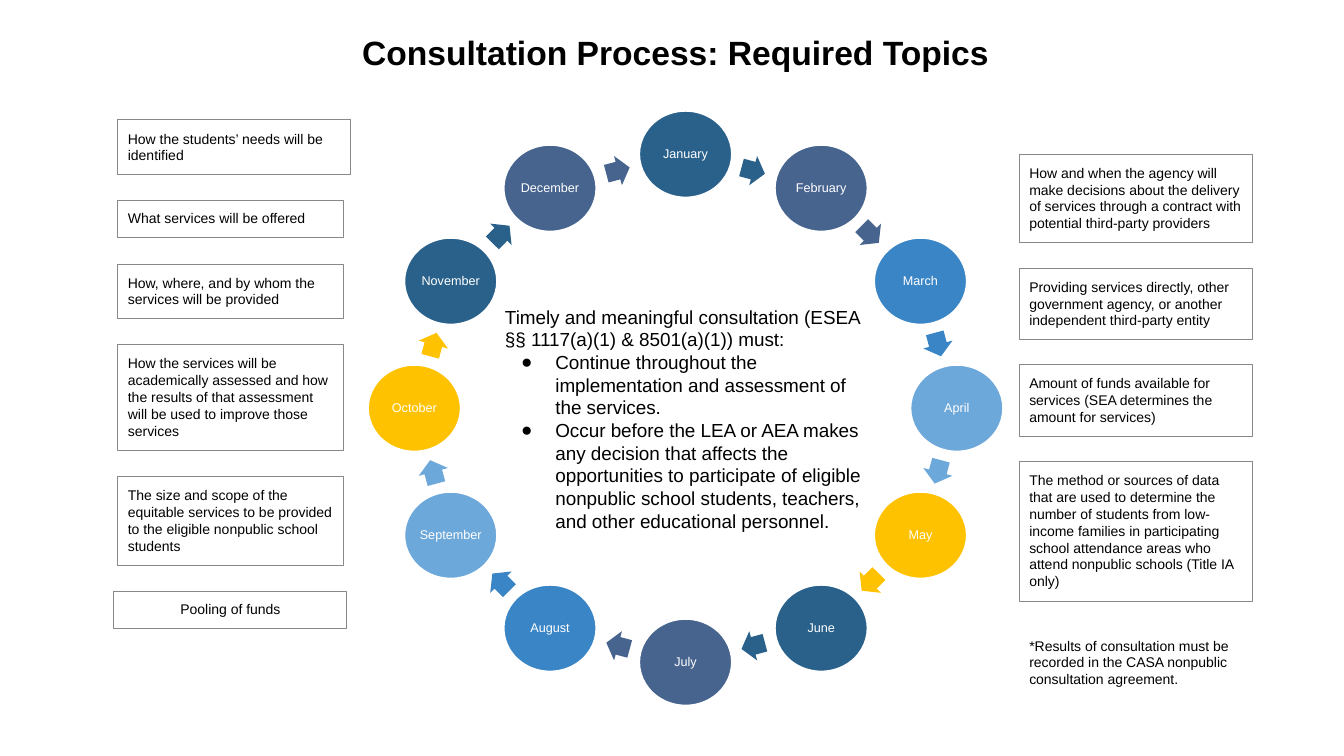
"""Build the slide on required consultation topics around the yearly cycle."""
from dataclasses import dataclass
from itertools import cycle
from math import cos, radians, sin

from lxml import etree
from pptx import Presentation
from pptx import util as u
from pptx.dml.color import RGBColor
from pptx.enum import shapes, text
from pptx.oxml import ns

BLACK, WHITE, GREY = "000000", "FFFFFF", "888888"
MONTHS = ("January", "February", "March", "April", "May", "June", "July",
          "August", "September", "October", "November", "December")
MONTH_COLORS = ("29618B", "47648F", "3A85C6", "6DA8DB", "FFC200")
CENTER_X, CENTER_Y = 6.8, 4.05
TOPIC_PADDING, TOPIC_LINE = 0.2, 0.17


@dataclass
class Topic:
    words: str
    lines: int
    left: float
    width: float = 2.31
    outlined: bool = True
    centered: bool = False


@dataclass
class Column:
    top: float
    gap: float
    topics: list[Topic]


COLUMNS = (
    Column(1.19, 0.26, [
        Topic("How the students’ needs will be identified", 2, 1.17),
        Topic("What services will be offered", 1, 1.17, 2.24),
        Topic("How, where, and by whom the services will be provided", 2, 1.17, 2.24),
        Topic("How the services will be academically assessed and how the results of that "
              "assessment will be used to improve those services", 5, 1.17, 2.24),
        Topic("The size and scope of the equitable services to be provided to the eligible "
              "nonpublic school students", 4, 1.17, 2.24),
        Topic("Pooling of funds", 1, 1.13, centered=True),
    ]),
    Column(1.53, 0.25, [
        Topic("How and when the agency will make decisions about the delivery of services "
              "through a contract with potential third-party providers", 4, 10.11),
        Topic("Providing services directly, other government agency, or another independent "
              "third-party entity", 3, 10.11),
        Topic("Amount of funds available for services (SEA determines the amount for "
              "services)", 3, 10.11),
        Topic("The method or sources of data that are used to determine the number of "
              "students from low-income families in participating school attendance areas "
              "who attend nonpublic schools (Title IA only)", 7, 10.11),
        Topic("*Results of consultation must be recorded in the CASA nonpublic consultation "
              "agreement.", 3, 10.11, outlined=False),
    ]),
)
REQUIREMENTS = (
    "Timely and meaningful consultation (ESEA §§ 1117(a)(1) & 8501(a)(1)) must:",
    "Continue throughout the implementation and assessment of the services.",
    "Occur before the LEA or AEA makes any decision that affects the opportunities to "
    "participate of eligible nonpublic school students, teachers, and other educational "
    "personnel.",
)


def color(value: str) -> RGBColor:
    return RGBColor.from_string(value)


def set_frame(shape, inset: float, anchor=text.MSO_ANCHOR.TOP):
    frame = shape.text_frame
    frame.word_wrap = True
    frame.vertical_anchor = anchor
    frame.margin_left = frame.margin_right = u.Inches(inset)
    frame.margin_top = frame.margin_bottom = u.Inches(inset)
    return frame


def set_paragraph(paragraph, words: str, size: float, font_color: str = BLACK,
                  bold: bool = False, centered: bool = False) -> None:
    paragraph.text = words
    paragraph.alignment = text.PP_ALIGN.CENTER if centered else text.PP_ALIGN.LEFT
    paragraph.font.name = "Arial"
    paragraph.font.size = u.Pt(size)
    paragraph.font.bold = bold
    paragraph.font.color.rgb = color(font_color)


def add_bullet(paragraph) -> None:
    properties = paragraph._p.get_or_add_pPr()
    properties.set("marL", str(u.Inches(0.5)))
    properties.set("indent", str(u.Inches(-0.34)))
    etree.SubElement(properties, ns.qn("a:buFont"), typeface="Arial")
    etree.SubElement(properties, ns.qn("a:buChar"), char="●")


def add_text_box(slide, left: float, top: float, width: float, height: float):
    box = slide.shapes.add_textbox(*map(u.Inches, (left, top, width, height)))
    frame = set_frame(box, 0.1)
    frame.auto_size = text.MSO_AUTO_SIZE.SHAPE_TO_FIT_TEXT
    return box


def add_cycle_shape(slide, kind, angle: float, radius_x: float, radius_y: float,
                    width: float, height: float, fill: str):
    left = CENTER_X + radius_x * sin(radians(angle)) - width / 2
    top = CENTER_Y - radius_y * cos(radians(angle)) - height / 2
    shape = slide.shapes.add_shape(kind, *map(u.Inches, (left, top, width, height)))
    shape.shadow.inherit = False
    shape.fill.solid()
    shape.fill.fore_color.rgb = color(fill)
    return shape


def add_month(slide, name: str, angle: float, fill: str) -> None:
    circle = add_cycle_shape(slide, shapes.MSO_SHAPE.OVAL, angle, 2.69, 2.52, 0.93, 0.87, fill)
    circle.line.color.rgb = color(WHITE)
    circle.line.width = u.Pt(2)
    paragraph = set_frame(circle, 0.01, text.MSO_ANCHOR.MIDDLE).paragraphs[0]
    set_paragraph(paragraph, name, 9, WHITE, centered=True)
    paragraph.line_spacing = 0.9


def add_arrow(slide, angle: float, fill: str) -> None:
    arrow = add_cycle_shape(slide, shapes.MSO_SHAPE.RIGHT_ARROW, angle, 2.59, 2.44,
                            0.24, 0.3, fill)
    arrow.adjustments[0], arrow.adjustments[1] = 0.6, 0.5
    arrow.line.fill.background()
    arrow.rotation = angle


def add_topic(slide, topic: Topic, top: float, height: float) -> None:
    if topic.outlined:
        box = slide.shapes.add_shape(shapes.MSO_SHAPE.RECTANGLE,
                                     *map(u.Inches, (topic.left, top, topic.width, height)))
        box.shadow.inherit = False
        box.fill.background()
        box.line.color.rgb = color(GREY)
        box.line.width = u.Pt(0.75)
        set_frame(box, 0.1).auto_size = text.MSO_AUTO_SIZE.SHAPE_TO_FIT_TEXT
    else:
        box = add_text_box(slide, topic.left, top, topic.width, height)
    set_paragraph(box.text_frame.paragraphs[0], topic.words, 10, centered=topic.centered)


def add_column(slide, column: Column) -> None:
    top = column.top
    for topic in column.topics:
        height = TOPIC_PADDING + TOPIC_LINE * topic.lines
        add_topic(slide, topic, top, height)
        top += height + column.gap


def add_requirements(slide) -> None:
    frame = add_text_box(slide, 4.91, 2.93, 3.78, 2.47).text_frame
    for index, words in enumerate(REQUIREMENTS):
        paragraph = frame.add_paragraph() if index else frame.paragraphs[0]
        if index:
            add_bullet(paragraph)
        set_paragraph(paragraph, words, 13.5)


def main() -> None:
    presentation = Presentation()
    presentation.slide_width, presentation.slide_height = u.Inches(13.33), u.Inches(7.5)
    slide = presentation.slides.add_slide(presentation.slide_layouts[6])
    title = add_text_box(slide, 1.17, 0.22, 11.06, 0.61)
    set_paragraph(title.text_frame.paragraphs[0], "Consultation Process: Required Topics", 24,
                  bold=True, centered=True)
    step = 360 / len(MONTHS)
    for index, (name, fill) in enumerate(zip(MONTHS, cycle(MONTH_COLORS))):
        add_month(slide, name, index * step, fill)
        add_arrow(slide, (index + 0.5) * step, fill)
    add_requirements(slide)
    for column in COLUMNS:
        add_column(slide, column)
    presentation.save("out.pptx")


if __name__ == "__main__":
    main()
